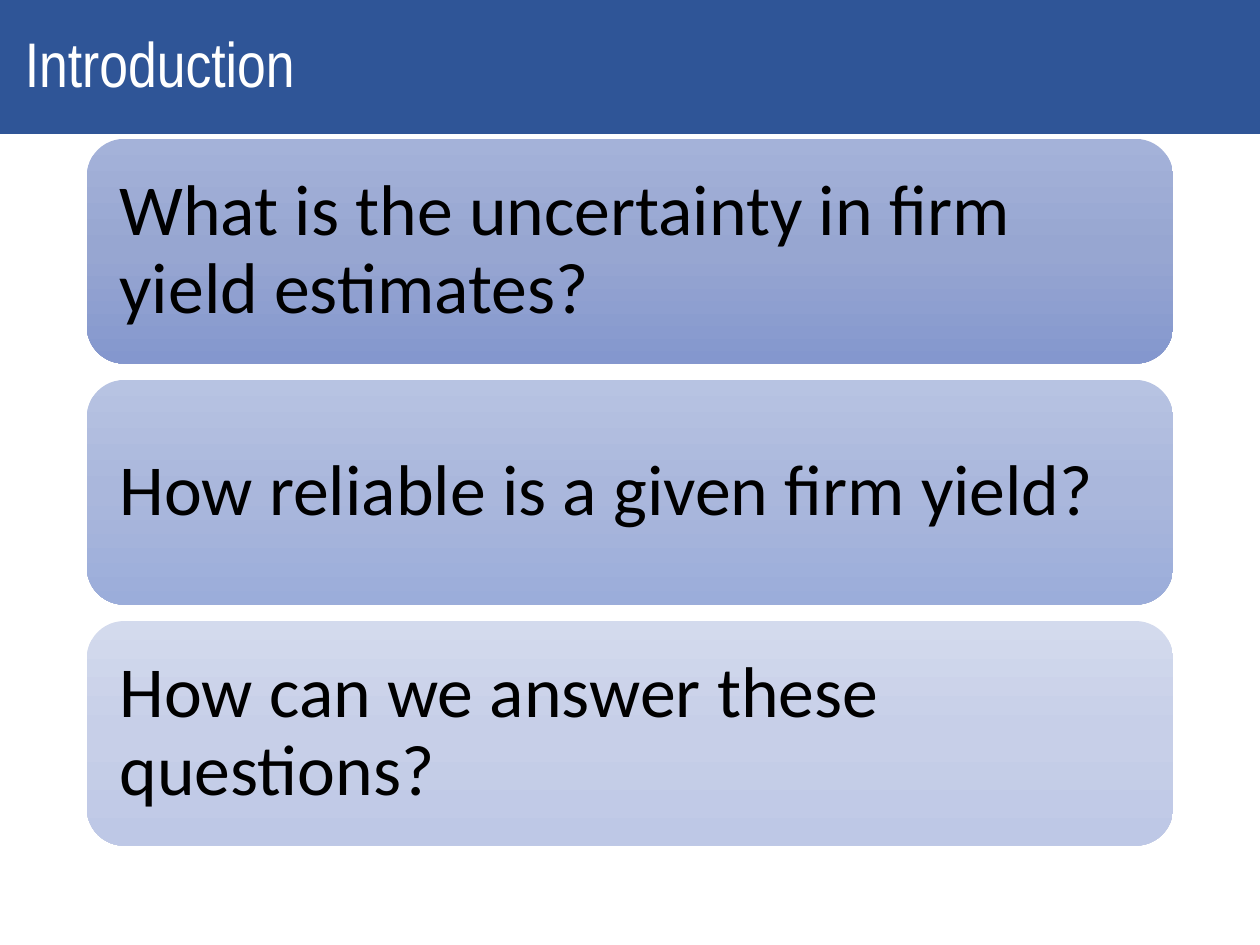
from copy import deepcopy

from pptx import Presentation
from pptx.dml.color import RGBColor
from pptx.enum.shapes import MSO_SHAPE
from pptx.enum.text import MSO_ANCHOR, PP_ALIGN
from pptx.util import Cm, Pt

SLIDE_WIDTH, SLIDE_HEIGHT = 25.4, 19.05
CARD_LEFT, CARD_TOP, CARD_WIDTH, CARD_HEIGHT = 1.75, 2.8, 21.9, 4.53
CARD_STEP = 4.86
QUESTIONS = [
    ("What is the uncertainty in firm yield estimates?", ("A4B2D9", "97A6D1", "8497CE")),
    ("How reliable is a given firm yield?", ("B7C3E2", "AAB7DC", "9BADDA")),
    ("How can we answer these questions?", ("D3DAED", "C7CFE8", "BEC8E6")),
]


def color(value):
    return RGBColor.from_string(value)


def add_block(slide, kind, left, top, width, height):
    shape = slide.shapes.add_shape(kind, Cm(left), Cm(top), Cm(width), Cm(height))
    shape.shadow.inherit = False
    shape.line.fill.background()
    return shape


def write_text(shape, text, font_name, size, text_color, left_inset, right_inset):
    frame = shape.text_frame
    frame.word_wrap = True
    frame.vertical_anchor = MSO_ANCHOR.MIDDLE
    frame.margin_left, frame.margin_right = Cm(left_inset), Cm(right_inset)
    paragraph = frame.paragraphs[0]
    paragraph.alignment = PP_ALIGN.LEFT
    paragraph.line_spacing = 0.9
    run = paragraph.add_run()
    run.text = text
    run.font.name = font_name
    run.font.size = Pt(size)
    run.font.color.rgb = color(text_color)


def fill_gradient(shape, colors):
    """Fill the shape from top to bottom with evenly spaced colours."""
    fill = shape.fill
    fill.gradient()
    fill.gradient_angle = 270
    stop_list = shape.element.spPr.find(".//{*}gsLst")
    while len(stop_list) < len(colors):
        stop_list.append(deepcopy(stop_list[0]))
    for index, (stop, value) in enumerate(zip(fill.gradient_stops, colors)):
        stop.position = index / (len(colors) - 1)
        stop.color.rgb = color(value)


def add_title(slide, text):
    banner = add_block(slide, MSO_SHAPE.RECTANGLE, 0, 0, SLIDE_WIDTH, 2.7)
    banner.fill.solid()
    banner.fill.fore_color.rgb = color("2F5597")
    write_text(banner, text, "Arial Narrow", 36, "FFFFFF", 0.5, 0.25)


def add_question(slide, top, text, colors):
    card = add_block(slide, MSO_SHAPE.ROUNDED_RECTANGLE, CARD_LEFT, top, CARD_WIDTH, CARD_HEIGHT)
    fill_gradient(card, colors)
    write_text(card, text, "Calibri", 41, "000000", 0.44, 0.44)


def main():
    presentation = Presentation()
    presentation.slide_width = Cm(SLIDE_WIDTH)
    presentation.slide_height = Cm(SLIDE_HEIGHT)
    slide = presentation.slides.add_slide(presentation.slide_layouts[6])
    add_title(slide, "Introduction")
    for index, (text, colors) in enumerate(QUESTIONS):
        add_question(slide, CARD_TOP + index * CARD_STEP, text, colors)
    presentation.save("out.pptx")


if __name__ == "__main__":
    main()
